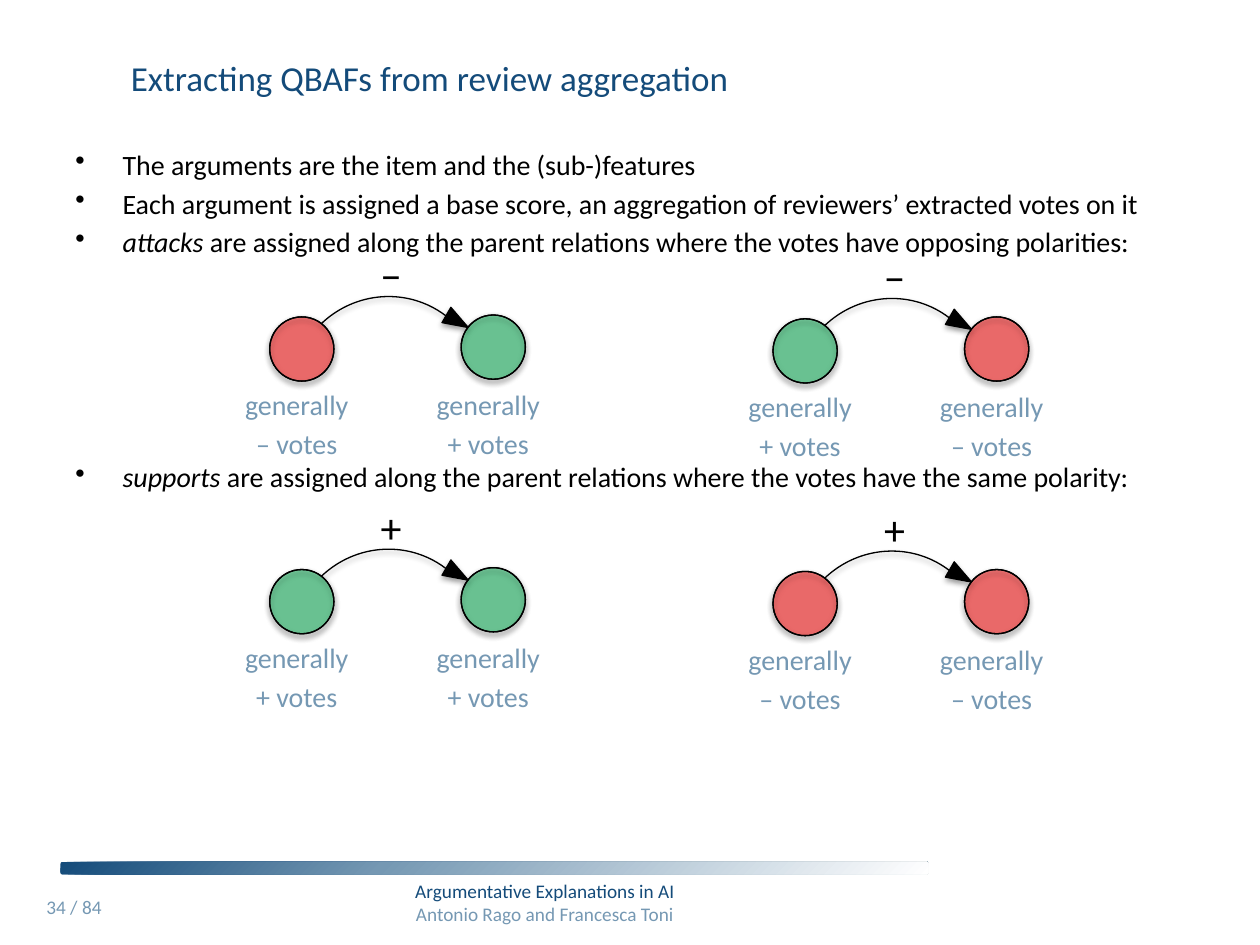
import dataclasses
import pptx
import pptx.dml.color
import pptx.enum.shapes
import pptx.enum.text
import pptx.oxml
import pptx.oxml.ns
import pptx.util

SHAPE = pptx.enum.shapes.MSO_SHAPE
ALIGN = pptx.enum.text.PP_ALIGN
ANCHOR = pptx.enum.text.MSO_ANCHOR
A_NS = pptx.oxml.ns.nsdecls("a")
CELL = pptx.util.Inches(0.1)  # the slide is a grid of 100 columns by 75 rows


@dataclasses.dataclass(frozen=True)
class Theme:
    font: str = "Calibri"
    navy: str = "144B7A"
    steel: str = "7598B3"
    black: str = "000000"
    white: str = "FFFFFF"
    positive: str = "00B050"
    negative: str = "FF0000"
    title: int = 20
    body: int = 16
    sign: int = 24
    footer: int = 11
    line: float = 0.75
    gap: float = 3


@dataclasses.dataclass(frozen=True)
class Box:
    x: float
    y: float
    w: float
    h: float

    def inner(self, dx, dy, w, h):
        return Box(self.x + dx, self.y + dy, w, h)

    def emu(self):
        return [round(v * CELL) for v in (self.x, self.y, self.w, self.h)]


T = Theme()


def rgb(color):
    return pptx.dml.color.RGBColor.from_string(color)


def add_run(p, text, size, color, italic=False):
    r = p.add_run()
    r.text = text
    r.font.name, r.font.size = T.font, pptx.util.Pt(size)
    r.font.color.rgb = rgb(color)
    r.font.italic = italic


def add_lines(tf, lines, size, align=ALIGN.LEFT, gap=0):
    """Write (text, colour) pairs, one paragraph each."""
    for i, (text, color) in enumerate(lines):
        p = tf.add_paragraph() if i else tf.paragraphs[0]
        p.alignment = align
        p.space_before = pptx.util.Pt(gap if i else 0)
        add_run(p, text, size, color)


def add_text(shapes, box, wrap=True):
    tf = shapes.add_textbox(*box.emu()).text_frame
    tf.word_wrap = wrap
    return tf


def add_inked(shapes, kind, box, fill=None, alpha=None):
    """Add a thin black-lined shape with a soft shadow below it."""
    sp = shapes.add_shape(kind, *box.emu())
    if fill:
        sp.fill.solid()
        sp.fill.fore_color.rgb = rgb(fill)
    else:
        sp.fill.background()
    if alpha:
        clr = sp._element.spPr.find(".//" + pptx.oxml.ns.qn("a:srgbClr"))
        clr.append(pptx.oxml.parse_xml(f'<a:alpha {A_NS} val="{alpha * 1000}"/>'))
    sp.line.color.rgb = rgb(T.black)
    sp.line.width = pptx.util.Pt(T.line)
    sp.shadow.inherit = False
    effects = sp._element.spPr.find(pptx.oxml.ns.qn("a:effectLst"))
    effects.append(pptx.oxml.parse_xml(
        f'<a:outerShdw {A_NS} blurRad="40000" dist="23000" dir="5400000" rotWithShape="0">'
        f'<a:srgbClr val="{T.black}"><a:alpha val="35000"/></a:srgbClr></a:outerShdw>'))
    return sp


def add_footer(s, box):
    # Gradient rule
    bar = s.shapes.add_shape(SHAPE.ROUNDED_RECTANGLE, *box.inner(2.1, 0, 68.9, 1).emu())
    stops = "".join(f'<a:gs pos="{pos * 1000}"><a:srgbClr val="{c}"/></a:gs>'
                    for pos, c in ((0, T.white), (63, T.steel), (100, T.navy)))
    bar._element.spPr.insert(2, pptx.oxml.parse_xml(
        f'<a:gradFill {A_NS}><a:gsLst>{stops}</a:gsLst><a:path path="circle">'
        '<a:fillToRect l="100000" t="100000"/></a:path></a:gradFill>'))
    bar.line.fill.background()
    bar.shadow.inherit = False
    # Talk and authors
    add_lines(add_text(s.shapes, box.inner(8.9, 0.9, 63.3, 4.7)),
              [("Argumentative Explanations in AI", T.navy),
               ("Antonio Rago and Francesca Toni", T.steel)], T.footer, ALIGN.CENTER)
    # Page number
    page = s.shapes.add_shape(SHAPE.RECTANGLE, *box.inner(0, 2.2, 6.7, 4).emu())
    page.fill.solid()
    page.fill.fore_color.rgb = rgb(T.white)
    page.line.fill.background()
    page.shadow.inherit = False
    page.text_frame.word_wrap = False
    page.text_frame.vertical_anchor = ANCHOR.TOP
    add_lines(page.text_frame, [("34 / 84", T.steel)], T.footer)


def add_title(s, box, text):
    tf = add_text(s.shapes, box)
    tf.vertical_anchor = ANCHOR.MIDDLE
    p = tf.paragraphs[0]
    p.alignment = ALIGN.JUSTIFY
    p._p.get_or_add_pPr().set("marL", str(round(4.4 * CELL)))
    add_run(p, text, T.title, T.navy)


def add_bullets(s, box, bullets):
    """Write bullets given as (space before, term in italics, rest)."""
    tf = add_text(s.shapes, box)
    for i, (gap, term, rest) in enumerate(bullets):
        p = tf.add_paragraph() if i else tf.paragraphs[0]
        p.space_before = pptx.util.Pt(gap)
        pPr = p._p.get_or_add_pPr()
        pPr.set("marL", str(round(3.75 * CELL)))
        pPr.set("indent", str(round(-3.75 * CELL)))
        pPr.append(pptx.oxml.parse_xml(f'<a:buChar {A_NS} char="•"/>'))
        if term:
            add_run(p, term, T.body, T.black, italic=True)
        add_run(p, rest, T.body, T.black)


def add_relation(s, box, sign, polarities):
    """Draw two voted arguments joined by a signed, curved arrow."""
    # Arrow with its sign
    arrow = s.shapes.add_group_shape().shapes
    arc = add_inked(arrow, SHAPE.BLOCK_ARC, box.inner(5.75, 4.3, 15.3, 15), T.black)
    for i, value in enumerate((160.861, 213.771, 0)):
        arc.adjustments[i] = value
    arc.rotation = 318.2
    add_lines(add_text(arrow, box.inner(11.9, 0, 3.7, 5), wrap=False),
              [(sign, T.black)], T.sign, ALIGN.CENTER)
    head = add_inked(arrow, SHAPE.ISOSCELES_TRIANGLE, box.inner(18.3, 5.2, 1.4, 2), T.black)
    head.rotation = 120
    # Arguments, each a tinted disc under a ring, with a label below
    for i, polarity in enumerate(polarities):
        x = 15.2 * i
        add_lines(add_text(s.shapes, box.inner(x - 0.3, 11, 13.1, 10.1)),
                  [("generally", T.steel), (f"{polarity} votes", T.steel)],
                  T.body, ALIGN.CENTER, T.gap)
        node = s.shapes.add_group_shape().shapes
        disc = box.inner(x + 4.1, 5.85 - 0.15 * i, 5.1, 5.1)
        tint = T.positive if polarity == "+" else T.negative
        add_inked(node, SHAPE.OVAL, disc, tint, alpha=50)
        add_inked(node, SHAPE.OVAL, disc)


def main():
    prs = pptx.Presentation()
    prs.slide_width, prs.slide_height = 100 * CELL, 75 * CELL
    s = prs.slides.add_slide(prs.slide_layouts[6])
    add_footer(s, Box(2.7, 68.4, 72.2, 6.2))
    add_title(s, Box(5, 3, 90, 6.3), "Extracting QBAFs from review aggregation")
    add_bullets(s, Box(5, 11.2, 90, 55.9), [
        (0, "", "The arguments are the item and the (sub-)features"),
        (T.gap, "", "Each argument is assigned a base score, an aggregation of "
                    "reviewers’ extracted votes on it"),
        (T.gap, "attacks", " are assigned along the parent relations where the votes "
                           "have opposing polarities:"),
        (115, "supports", " are assigned along the parent relations where the votes "
                          "have the same polarity:"),
    ])
    # Attacks in the first row, supports in the second
    rows = [("−", ("–+", "+–")), ("+", ("++", "––"))]
    for row, (sign, pairs) in enumerate(rows):
        for col, pair in enumerate(pairs):
            box = Box(17.3 + 39.95 * col, 19.3 + 20.05 * row + 0.15 * col, 28.3, 21.1)
            add_relation(s, box, sign, pair)
    prs.save("out.pptx")


if __name__ == "__main__":
    main()
